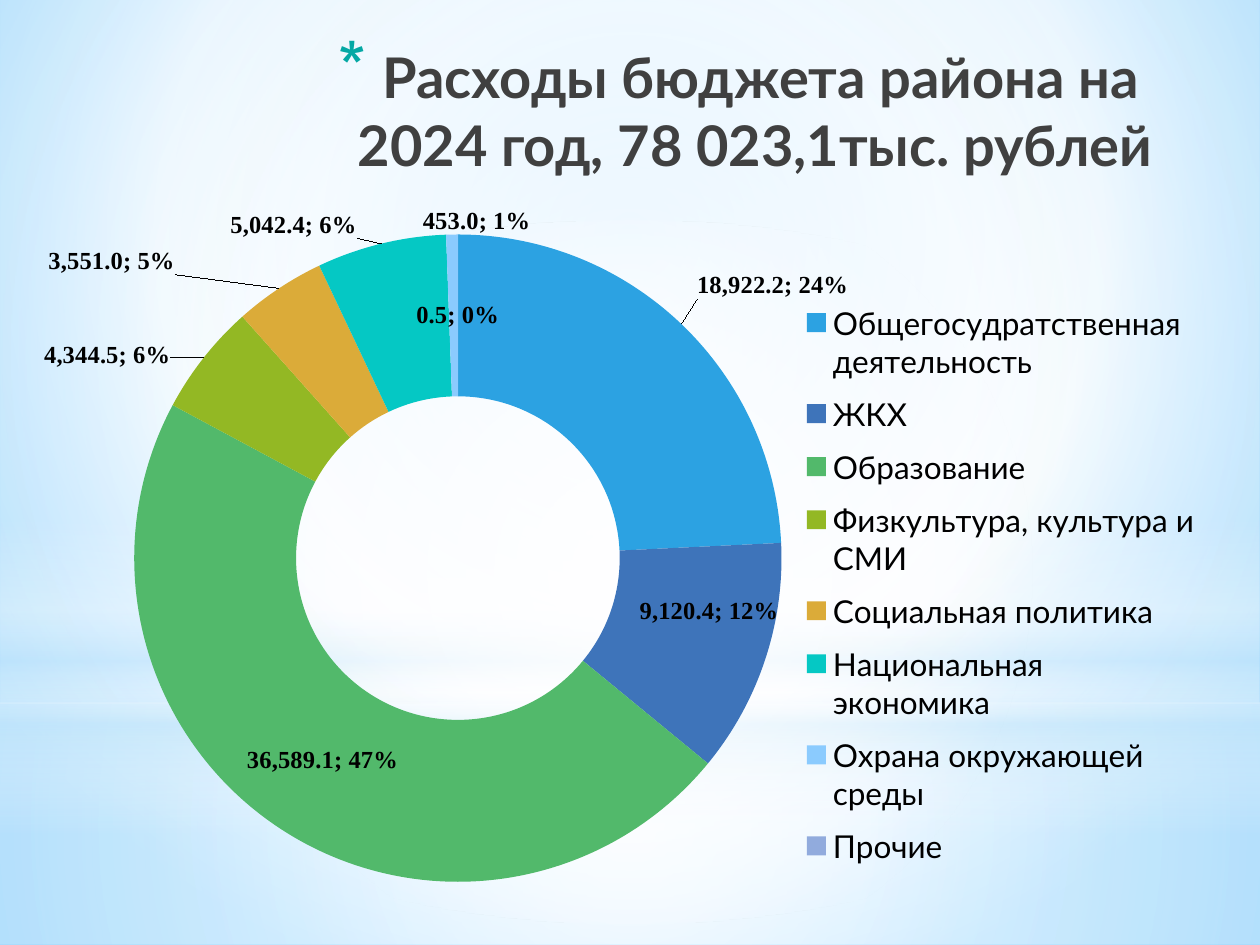
from copy import deepcopy

from lxml.etree import SubElement
from pptx import Presentation
from pptx.chart.data import CategoryChartData
from pptx.dml.color import RGBColor
from pptx.enum.chart import XL_CHART_TYPE, XL_LEGEND_POSITION
from pptx.enum.shapes import MSO_SHAPE
from pptx.enum.text import MSO_ANCHOR, PP_ALIGN
from pptx.oxml import parse_xml
from pptx.oxml.ns import nsdecls, qn
from pptx.util import Inches, Pt

COLORS = {
    "white": "FFFFFF", "mist": "C6E7FC", "sky": "B0E0FF", "azure": "6BC5FF",
    "title": "404040", "bullet": "04A8A4", "text": "000000",
}
SECTORS = [
    ("Общегосудратственная деятельность ", 18922.2, "2CA2E2", (0.126, -0.138)),
    ("ЖКХ", 9120.4, "3E74BA", (0.018, -0.033)),
    ("Образование", 36589.1, "52B96B", None),
    ("Физкультура, культура и СМИ", 4344.5, "93B824", (-0.137, -0.075)),
    ("Социальная политика", 3551.0, "DBAB39", (-0.181, -0.135)),
    ("Национальная экономика", 5042.4, "05C8C4", (-0.091, -0.139)),
    ("Охрана окружающей среды", 453.0, "8BCBFE", (0.02, -0.134)),
    ("Прочие ", 0.5, "91ABDD", None),
]
CENTER = (50, 50, 50, 50)


def gradient_xml(stops, focus=None):
    colors = "".join(
        f'<a:gs pos="{position * 1000}"><a:srgbClr val="{COLORS[color]}">'
        f'<a:alpha val="{opacity * 1000}"/></a:srgbClr></a:gs>'
        for position, color, opacity in stops
    )
    if focus:
        edges = " ".join(f'{side}="{share * 1000}"' for side, share in zip("ltrb", focus))
        direction = f'<a:path path="circle"><a:fillToRect {edges}/></a:path>'
    else:
        direction = '<a:lin ang="5400000" scaled="0"/>'
    return f'<a:gradFill {nsdecls("a")} rotWithShape="1"><a:gsLst>{colors}</a:gsLst>{direction}</a:gradFill>'


def layout_xml(left, top, width=None, height=None, inner=False):
    target = '<c:layoutTarget val="inner"/>' if inner else ""
    modes = '<c:xMode val="edge"/><c:yMode val="edge"/>' if width else ""
    size = f'<c:w val="{width}"/><c:h val="{height}"/>' if width else ""
    return (
        f'<c:layout {nsdecls("c")}><c:manualLayout>{target}{modes}'
        f'<c:x val="{left}"/><c:y val="{top}"/>{size}</c:manualLayout></c:layout>'
    )


class BudgetSlide:
    def __init__(self, presentation):
        self.width = presentation.slide_width
        self.height = presentation.slide_height
        self.slide = presentation.slides.add_slide(presentation.slide_layouts[6])

    def box(self, left, top, width, height):
        return (
            round(left * self.width), round(top * self.height),
            round(width * self.width), round(height * self.height),
        )

    def style(self, font, name, size, color, bold=False):
        font.name, font.size, font.bold = name, Pt(size), bold
        font.color.rgb = RGBColor.from_string(COLORS[color])

    def background(self, stops, focus):
        fill = self.slide.background.fill
        fill.solid()
        properties = self.slide.element.find(".//" + qn("p:bgPr"))
        properties.replace(properties[0], parse_xml(gradient_xml(stops, focus)))

    def glow(self, kind, top, height, stops, focus=None):
        shape = self.slide.shapes.add_shape(kind, *self.box(0, top, 1, height))
        shape.shadow.inherit = False
        shape.line.fill.background()
        shape.fill.solid()
        properties = shape.element.spPr
        solid = properties.find(qn("a:solidFill"))
        properties.replace(solid, parse_xml(gradient_xml(stops, focus)))

    def title(self, lines, box):
        frame = self.slide.shapes.add_textbox(*self.box(*box)).text_frame
        frame.word_wrap = True
        frame.vertical_anchor = MSO_ANCHOR.MIDDLE
        paragraph = frame.paragraphs[0]
        paragraph.alignment = PP_ALIGN.RIGHT
        for index, line in enumerate(lines):
            if index:
                paragraph.add_line_break()
            paragraph.add_run().text = line
        self.style(paragraph.font, "Lato", 32, "title", True)
        properties = paragraph._p.get_or_add_pPr()
        properties.set("marL", str(Inches(0.35)))
        properties.set("indent", str(-Inches(0.35)))
        bullet = (
            f'<a:buClr {nsdecls("a")}><a:srgbClr val="{COLORS["bullet"]}"/></a:buClr>',
            f'<a:buSzPct {nsdecls("a")} val="128000"/>',
            f'<a:buChar {nsdecls("a")} char="*"/>',
        )
        for index, element in enumerate(bullet):
            properties.insert(index, parse_xml(element))

    def doughnut(self, sectors, box):
        data = CategoryChartData(number_format="#,##0.0")
        data.categories = [name for name, *_ in sectors]
        data.add_series("Series 1", [value for _, value, *_ in sectors])
        chart = self.slide.shapes.add_chart(XL_CHART_TYPE.DOUGHNUT, *self.box(*box), data).chart
        self.style(chart.font, "Lato", 18, "text")
        chart.has_title = False
        chart.has_legend = True
        chart.legend.position = XL_LEGEND_POSITION.RIGHT
        chart.legend.include_in_layout = False
        self.place(chart.legend._element, layout_xml(0.664, 0.12, 0.334, 0.84), "c:legendPos")
        plot_area = chart._chartSpace.chart.plotArea
        self.place(plot_area, layout_xml(0.077, 0.043, 0.553, 0.92, True))
        plot = chart.plots[0]
        plot.vary_by_categories = True
        plot._element.find(qn("c:holeSize")).set("val", "50")
        series = plot.series[0]
        for index, (_, _, color, _) in enumerate(sectors):
            point = series.points[index].format
            point.fill.solid()
            point.fill.fore_color.rgb = RGBColor.from_string(color)
            point.line.fill.background()
        self.sector_labels(series.data_labels, [offset for *_, offset in sectors])

    def place(self, parent, layout, after=None):
        for old in parent.findall(qn("c:layout")):
            parent.remove(old)
        index = parent.index(parent.find(qn(after))) + 1 if after else 0
        parent.insert(index, parse_xml(layout))

    def sector_labels(self, labels, offsets):
        labels.show_value = labels.show_percentage = True
        labels.number_format = "#,##0.0"
        labels.number_format_is_linked = True
        self.style(labels.font, "Times New Roman", 14, "text", True)
        element = labels._element
        for tag in ("c:separator", "c:showLeaderLines"):
            for old in element.findall(qn(tag)):
                element.remove(old)
        SubElement(element, qn("c:separator")).text = "; "
        shared = list(element)
        SubElement(element, qn("c:showLeaderLines")).set("val", "1")
        moved = [(index, offset) for index, offset in enumerate(offsets) if offset]
        for position, (index, offset) in enumerate(moved):
            label = parse_xml(f'<c:dLbl {nsdecls("c")}><c:idx val="{index}"/></c:dLbl>')
            label.append(parse_xml(layout_xml(*offset)))
            label.extend(deepcopy(child) for child in shared)
            element.insert(position, label)


def main():
    presentation = Presentation()
    presentation.slide_width, presentation.slide_height = Inches(10), Inches(7.5)
    page = BudgetSlide(presentation)
    page.background(
        [(0, "sky", 100), (60, "white", 100), (100, "azure", 100)], (20, 10, 20, 60))
    page.glow(MSO_SHAPE.RECTANGLE, 0.744, 0.256,
              [(0, "white", 91), (37, "white", 76), (100, "mist", 79)], CENTER)
    page.glow(MSO_SHAPE.RECTANGLE, 0, 0.744,
              [(0, "white", 89), (48, "white", 62), (100, "mist", 79)], CENTER)
    page.glow(MSO_SHAPE.RECTANGLE, 0.549, 0.333,
              [(0, "white", 0), (29, "white", 30), (45, "mist", 40),
               (55, "white", 26), (65, "mist", 60), (100, "white", 0)])
    page.glow(MSO_SHAPE.OVAL, 0.233, 0.744,
              [(0, "white", 100), (56, "white", 0)], CENTER)
    page.title(["Расходы бюджета района на ", "2024 год, 78 023,1тыс. рублей"],
               (0.067, 0.033, 0.858, 0.167))
    page.doughnut(SECTORS, (0.035, 0.216, 0.929, 0.745))
    presentation.save("out.pptx")


if __name__ == "__main__":
    main()
